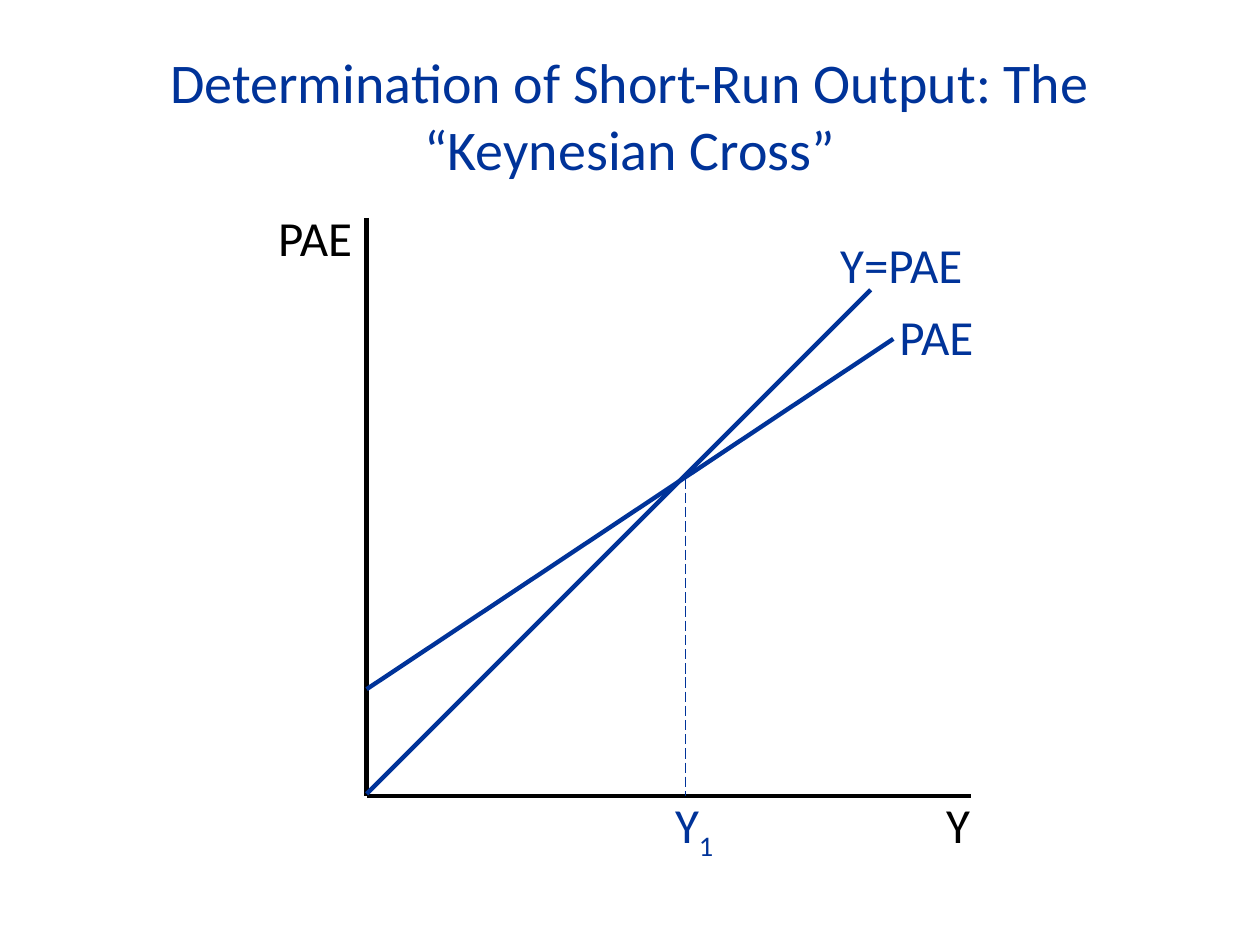
from lxml.etree import SubElement
from pptx import Presentation
from pptx.dml.color import RGBColor
from pptx.enum.dml import MSO_LINE
from pptx.enum.shapes import MSO_CONNECTOR
from pptx.enum.text import MSO_ANCHOR, MSO_AUTO_SIZE, PP_ALIGN
from pptx.oxml.ns import qn
from pptx.util import Inches, Pt

COLUMNS, ROWS = 100, 75
UNIT = Inches(10) // COLUMNS
BLUE, BLACK = "003399", "000000"
FONT = "Calibri"


def color(value):
    return RGBColor.from_string(value)


def grid(*lengths):
    return [round(length * UNIT) for length in lengths]


def add_run(paragraph, text, size, ink, baseline=0):
    run = paragraph.add_run()
    run.text = text
    run.font.name = FONT
    run.font.size = Pt(size)
    run.font.color.rgb = color(ink)
    if baseline:
        run._r.get_or_add_rPr().set("baseline", str(baseline * 1000))


def add_text(slide, box, runs, size, ink, align=PP_ALIGN.LEFT,
             anchor=MSO_ANCHOR.TOP, spacing=None):
    frame = slide.shapes.add_textbox(*grid(*box)).text_frame
    frame.word_wrap = True
    frame.auto_size = MSO_AUTO_SIZE.SHAPE_TO_FIT_TEXT
    frame.vertical_anchor = anchor
    paragraph = frame.paragraphs[0]
    paragraph.alignment = align
    paragraph.line_spacing = spacing
    for text, baseline in runs:
        add_run(paragraph, text, size, ink, baseline)


def add_line(slide, start, end, ink, width=2.5, dash=None):
    line = slide.shapes.add_connector(MSO_CONNECTOR.STRAIGHT, *grid(*start, *end))
    line.line.color.rgb = color(ink)
    line.line.width = Pt(width)
    if dash:
        line.line.dash_style = dash
    SubElement(line._element.spPr, qn("a:effectLst"))


def add_title(slide, box):
    add_text(slide, box, [("Determination of Short-Run Output: The “Keynesian Cross”", 0)],
             32, BLUE, PP_ALIGN.CENTER, MSO_ANCHOR.MIDDLE)


def add_keynesian_cross(slide, box):
    left, top, width, height = box
    equilibrium = 25.3

    def line(start, end, *style):
        add_line(slide, (left + start[0], top + start[1]),
                 (left + end[0], top + end[1]), *style)

    def label(place, runs, ink, spacing=None):
        column, row, columns, rows = place
        add_text(slide, (left + column, top + row, columns, rows), runs, 28, ink,
                 spacing=spacing)

    line((0, 0), (0, height), BLACK)
    line((0, height), (width, height), BLACK)
    label((45, 45.3, 4.9, 5.7), [("Y", 0)], BLACK)
    line((0, 37.4), (41.8, 9.6), BLUE)
    label((41.3, 6.5, 8.3, 5.7), [("PAE", 0)], BLUE)
    label((-8, -0.4, 8.2, 4.9), [("PAE", 0)], BLACK, 0.8)
    line((0, 45.7), (40, 5.7), BLUE)
    label((36.6, 0.8, 12.5, 5.7), [("Y=PAE", 0)], BLUE)
    line((equilibrium, 20.7), (equilibrium, height), BLUE, 0.75, MSO_LINE.LONG_DASH)
    label((23.5, 45.3, 6.6, 5.7), [("Y", 0), ("1", -25)], BLUE)


def main():
    deck = Presentation()
    deck.slide_width, deck.slide_height = grid(COLUMNS, ROWS)
    slide = deck.slides.add_slide(deck.slide_layouts[6])
    add_title(slide, (7, 3.2, 86, 11.8))
    add_keynesian_cross(slide, (29.1, 17.3, 48, 45.9))
    deck.save("out.pptx")


if __name__ == "__main__":
    main()
